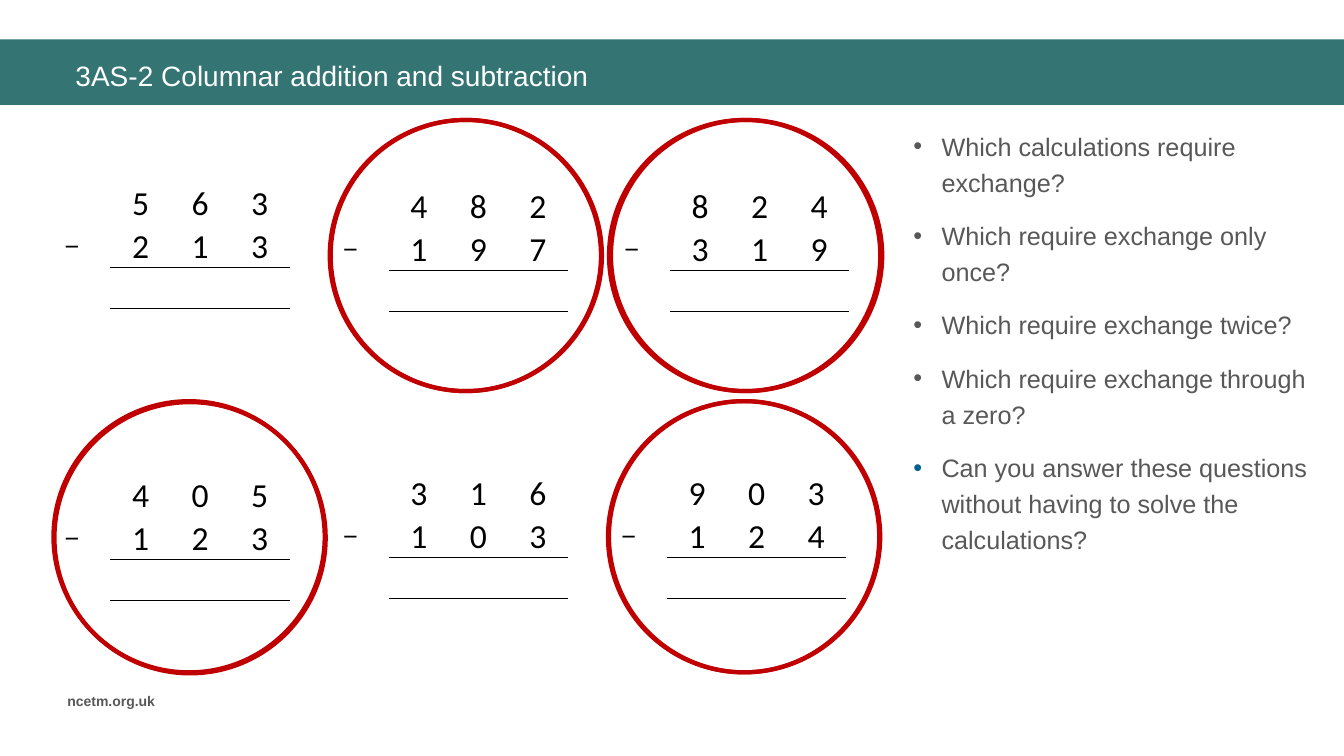
from dataclasses import dataclass

import lxml.etree
import pptx
import pptx.dml.color
import pptx.enum.shapes
import pptx.enum.text
import pptx.oxml
import pptx.oxml.ns
import pptx.slide
import pptx.table
import pptx.text.text
import pptx.util

Inches = pptx.util.Inches
Pt = pptx.util.Pt
Anchor = pptx.enum.text.MSO_ANCHOR
Shape = pptx.enum.shapes.MSO_SHAPE

TEAL, RED, GREY, BLUE = "347574", "C00000", "585858", "00628C"
BLACK, WHITE = "000000", "FFFFFF"
COLUMN_WIDTHS = (0.77, 0.59, 0.59, 0.59)
ROW_HEIGHTS = (0.43, 0.43, 0.41)
CIRCLE_SIZE = 2.69


@dataclass(frozen=True)
class Subtraction:
    left: float
    top: float
    minuend: str
    subtrahend: str


@dataclass(frozen=True)
class Circle:
    left: float
    top: float


@dataclass(frozen=True)
class Question:
    text: str
    bullet_color: str = GREY


SUBTRACTIONS = (
    Subtraction(0.33, 1.79, "563", "213"),
    Subtraction(3.09, 1.82, "482", "197"),
    Subtraction(5.88, 1.82, "824", "319"),
    Subtraction(0.33, 4.69, "405", "123"),
    Subtraction(3.09, 4.67, "316", "103"),
    Subtraction(5.85, 4.67, "903", "124"),
)
CIRCLES = (
    Circle(3.28, 1.19),
    Circle(6.04, 1.19),
    Circle(6.04, 3.98),
    Circle(0.53, 3.98),
    Circle(6.06, 1.19),
    Circle(0.54, 3.99),
    Circle(3.27, 1.19),
    Circle(6.03, 3.98),
)
QUESTIONS = (
    Question("Which calculations require exchange?"),
    Question("Which require exchange only once?"),
    Question("Which require exchange twice?"),
    Question("Which require exchange through a zero?"),
    Question("Can you answer these questions without having to solve the calculations?", BLUE),
)


def rgb(color: str) -> pptx.dml.color.RGBColor:
    return pptx.dml.color.RGBColor.from_string(color)


def set_font(paragraph: pptx.text.text._Paragraph, size: float, color: str,
             name: str = "Arial", bold: bool = False) -> None:
    font = paragraph.font
    font.size, font.name, font.bold = Pt(size), name, bold
    font.color.rgb = rgb(color)


def add_text_frame(slide: pptx.slide.Slide, left: float, top: float, width: float,
                   height: float) -> pptx.text.text.TextFrame:
    frame = slide.shapes.add_textbox(
        Inches(left), Inches(top), Inches(width), Inches(height)).text_frame
    frame.word_wrap = True
    return frame


def add_banner(slide: pptx.slide.Slide) -> None:
    banner = slide.shapes.add_shape(
        Shape.RECTANGLE, 0, Inches(0.39), Inches(13.33), Inches(0.65))
    banner.shadow.inherit = False
    banner.fill.solid()
    banner.fill.fore_color.rgb = rgb(TEAL)
    banner.line.fill.background()


def add_label(slide: pptx.slide.Slide, text: str, left: float, top: float, width: float,
              height: float, size: float, color: str, bold: bool = False) -> None:
    frame = add_text_frame(slide, left, top, width, height)
    frame.vertical_anchor = Anchor.MIDDLE
    paragraph = frame.paragraphs[0]
    paragraph.text = text
    set_font(paragraph, size, color, bold=bold)


def add_border(cell: pptx.table._Cell, side: str) -> None:
    properties = cell._tc.get_or_add_tcPr()
    properties.append(pptx.oxml.parse_xml(
        f'<a:{side} {pptx.oxml.ns.nsdecls("a")} w="{Pt(1)}"><a:solidFill>'
        f'<a:srgbClr val="{BLACK}"/></a:solidFill></a:{side}>'))


def add_subtraction(slide: pptx.slide.Slide, subtraction: Subtraction) -> None:
    table = slide.shapes.add_table(
        len(ROW_HEIGHTS), len(COLUMN_WIDTHS), Inches(subtraction.left), Inches(subtraction.top),
        Inches(sum(COLUMN_WIDTHS)), Inches(sum(ROW_HEIGHTS))).table
    table.first_row = table.horz_banding = False
    for column, width in zip(table.columns, COLUMN_WIDTHS):
        column.width = Inches(width)
    for row, height in zip(table.rows, ROW_HEIGHTS):
        row.height = Inches(height)
    rows = (" " + subtraction.minuend, "−" + subtraction.subtrahend, "    ")
    for row_index, symbols in enumerate(rows):
        for column_index, symbol in enumerate(symbols):
            cell = table.cell(row_index, column_index)
            cell.margin_left = cell.margin_right = Inches(0.07)
            cell.margin_top = cell.margin_bottom = 0
            cell.vertical_anchor = Anchor.MIDDLE
            if column_index and row_index == 2:
                add_border(cell, "lnT")
            if column_index and row_index:
                add_border(cell, "lnB")
            cell.fill.background()
            paragraph = cell.text_frame.paragraphs[0]
            paragraph.text = symbol.strip()
            paragraph.alignment = pptx.enum.text.PP_ALIGN.CENTER
            if symbol == "−":
                paragraph.line_spacing = 1.07
                set_font(paragraph, 18, BLACK)
            elif symbol.isdigit():
                paragraph.line_spacing = 1.07
                set_font(paragraph, 24, BLACK, "Calibri")


def add_circle(slide: pptx.slide.Slide, circle: Circle) -> None:
    ellipse = slide.shapes.add_shape(
        Shape.OVAL, Inches(circle.left), Inches(circle.top),
        Inches(CIRCLE_SIZE), Inches(CIRCLE_SIZE))
    ellipse.shadow.inherit = False
    ellipse.fill.background()
    ellipse.line.color.rgb = rgb(RED)
    ellipse.line.width = Pt(3)


def add_bullet(paragraph: pptx.text.text._Paragraph, color: str) -> None:
    properties = paragraph._p.get_or_add_pPr()
    properties.set("marL", str(Inches(0.28)))
    properties.set("indent", str(Inches(-0.28)))
    bullet_color = lxml.etree.SubElement(properties, pptx.oxml.ns.qn("a:buClr"))
    lxml.etree.SubElement(bullet_color, pptx.oxml.ns.qn("a:srgbClr"), val=color)
    lxml.etree.SubElement(properties, pptx.oxml.ns.qn("a:buFont"), typeface="Arial")
    lxml.etree.SubElement(properties, pptx.oxml.ns.qn("a:buChar"), char="•")


def add_questions(slide: pptx.slide.Slide) -> None:
    frame = add_text_frame(slide, 8.96, 1.19, 4.18, 4.49)
    for index, question in enumerate(QUESTIONS):
        paragraph = frame.add_paragraph() if index else frame.paragraphs[0]
        paragraph.text = question.text
        add_bullet(paragraph, question.bullet_color)
        paragraph.line_spacing = 1.2
        paragraph.space_before = Pt(6 if index else 0)
        paragraph.space_after = Pt(6)
        set_font(paragraph, 18, GREY)


def main() -> None:
    presentation = pptx.Presentation()
    presentation.slide_width, presentation.slide_height = Inches(13.33), Inches(7.5)
    slide = presentation.slides.add_slide(presentation.slide_layouts[6])
    add_banner(slide)
    add_label(slide, "ncetm.org.uk", 0.57, 6.82, 1.21, 0.27, 10, GREY, bold=True)
    add_label(slide, "3AS-2 Columnar addition and subtraction",
              0.65, 0.51, 12.32, 0.47, 20, WHITE)
    for subtraction in SUBTRACTIONS:
        add_subtraction(slide, subtraction)
    for circle in CIRCLES:
        add_circle(slide, circle)
    add_questions(slide)
    presentation.save("out.pptx")


if __name__ == "__main__":
    main()
